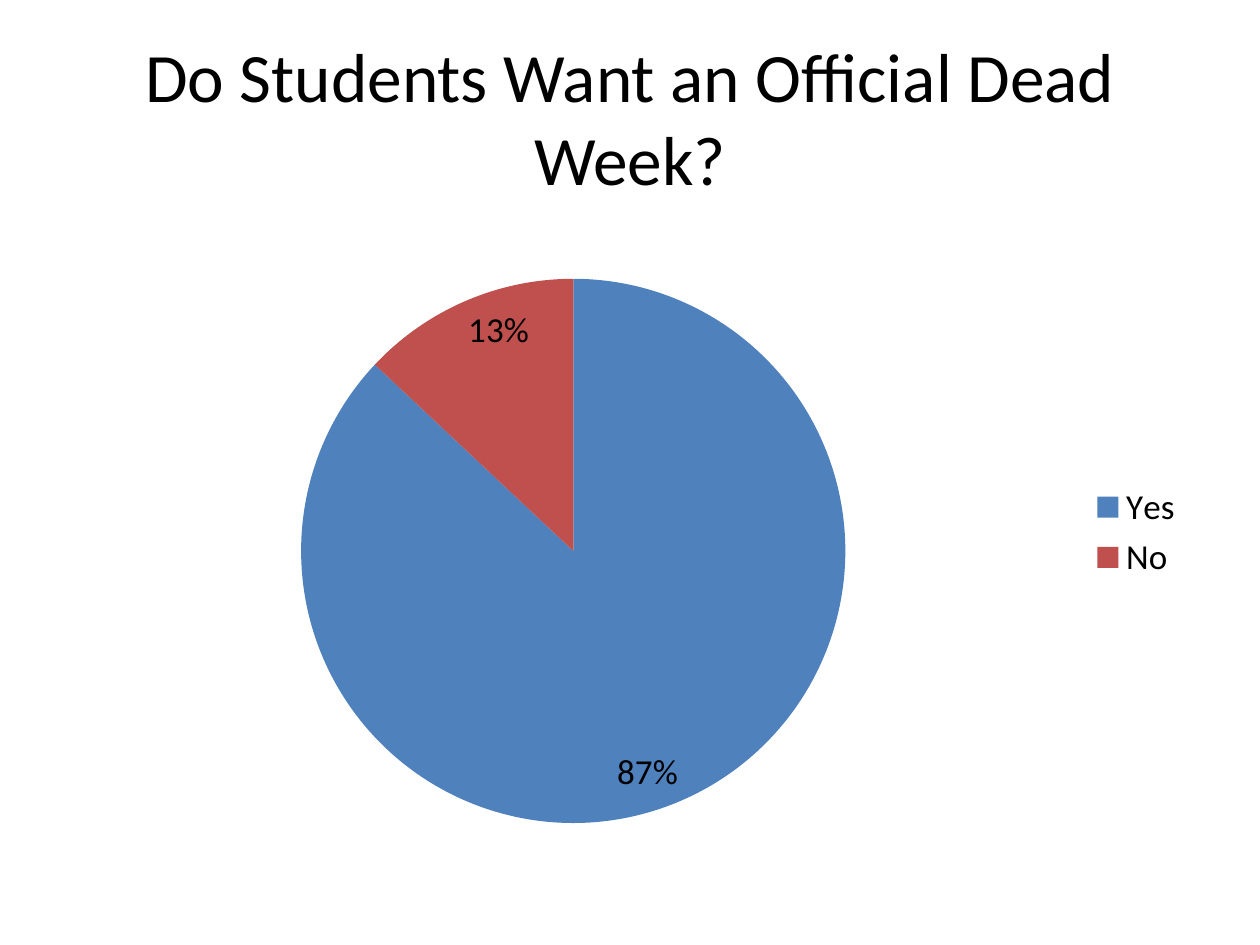
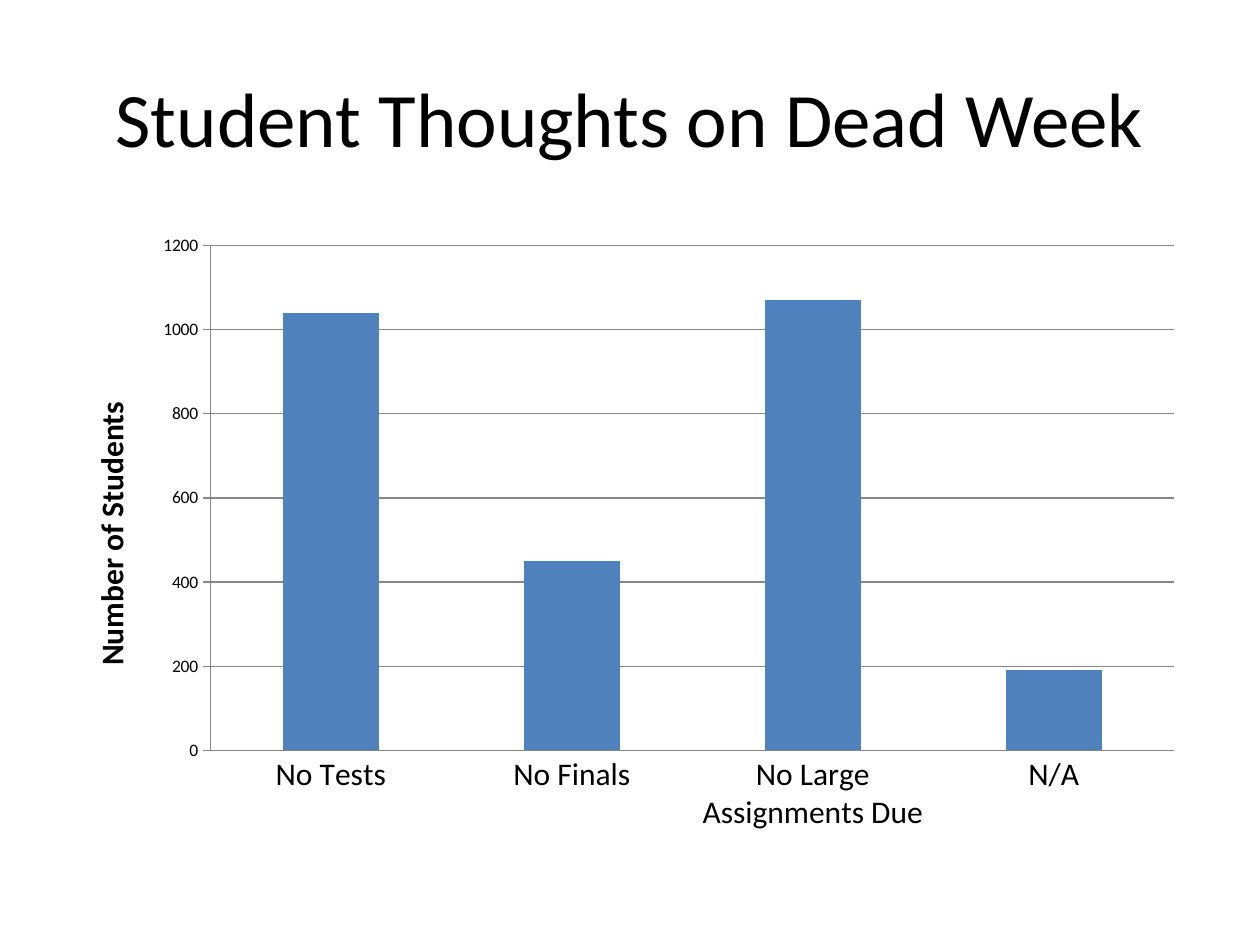
from dataclasses import dataclass

from lxml import etree
from pptx import Presentation
from pptx.chart.data import CategoryChartData
from pptx.dml.color import RGBColor
from pptx.enum.chart import XL_CHART_TYPE, XL_LABEL_POSITION, XL_LEGEND_POSITION, XL_TICK_MARK
from pptx.enum.text import MSO_ANCHOR, PP_ALIGN
from pptx.oxml.ns import qn
from pptx.util import Inches, Pt

PIE = XL_CHART_TYPE.PIE
COLUMN = XL_CHART_TYPE.COLUMN_CLUSTERED
INSIDE_END = XL_LABEL_POSITION.INSIDE_END
LEGEND_RIGHT = XL_LEGEND_POSITION.RIGHT
TICK_NONE = XL_TICK_MARK.NONE
TICK_CROSS = XL_TICK_MARK.CROSS
MIDDLE = MSO_ANCHOR.MIDDLE
CENTER = PP_ALIGN.CENTER


@dataclass(frozen=True)
class Theme:
    """Colours, font, type sizes and shared areas, as shares of the slide."""
    font: str = "Calibri"
    paper: RGBColor = RGBColor(0xFF, 0xFF, 0xFF)
    ink: RGBColor = RGBColor(0, 0, 0)
    blue: RGBColor = RGBColor(0x4F, 0x81, 0xBD)
    red: RGBColor = RGBColor(0xC0, 0x50, 0x4D)
    rule: RGBColor = RGBColor(0x87, 0x87, 0x87)
    title_size: float = 44
    long_title_size: float = 39.6
    chart_size: float = 10
    axis_size: float = 18
    label_size: float = 20
    title_area: tuple = (0.05, 0.04, 0.9, 1 / 6)
    chart_area: tuple = (0.05, 7 / 30, 0.9, 0.66)


class SurveyDeck:
    """Builds survey slides in one theme."""

    def __init__(self, theme):
        """Start an empty deck."""
        self.theme = theme
        self.deck = Presentation()
        self.deck.slide_width, self.deck.slide_height = Inches(10), Inches(7.5)
        self.page = None

    def place(self, area):
        """Turn shares of the slide into lengths."""
        sides = (self.deck.slide_width, self.deck.slide_height) * 2
        return [round(share * side) for share, side in zip(area, sides)]

    def style(self, font, size):
        """Give a font the theme's face and ink."""
        font.name, font.size = self.theme.font, Pt(size)
        font.color.rgb = self.theme.ink

    def add_page(self, title, size):
        """Add a blank page with a centred title."""
        self.page = self.deck.slides.add_slide(self.deck.slide_layouts[6])
        fill = self.page.background.fill
        fill.solid()
        fill.fore_color.rgb = self.theme.paper
        frame = self.page.shapes.add_textbox(*self.place(self.theme.title_area)).text_frame
        frame.word_wrap = True
        frame.vertical_anchor = MIDDLE
        para = frame.paragraphs[0]
        para.text, para.alignment = title, CENTER
        self.style(para.font, size)

    def add_chart(self, kind, answers, plot_area):
        """Add a one-series chart whose plot fills a share of its frame."""
        data = CategoryChartData()
        data.categories = list(answers)
        data.add_series("Series 1", answers.values())
        chart = self.page.shapes.add_chart(kind, *self.place(self.theme.chart_area), data).chart
        chart.has_title = chart.has_legend = False
        self.style(chart.font, self.theme.chart_size)
        self.fix_plot(chart, plot_area)
        return chart

    def fix_plot(self, chart, plot_area):
        """Set the inner plot's place as shares of the chart."""
        plot = chart.element.find(".//" + qn("c:plotArea"))
        for layout in plot.findall(qn("c:layout")):
            plot.remove(layout)
        layout = etree.Element(qn("c:layout"))
        plot.insert(0, layout)
        manual = etree.SubElement(layout, qn("c:manualLayout"))
        settings = [("layoutTarget", "inner"), ("xMode", "edge"), ("yMode", "edge")]
        for name, value in settings + list(zip("xywh", plot_area)):
            etree.SubElement(manual, qn("c:" + name)).set("val", str(value))

    def add_pie(self, answers, colors, plot_area):
        """Add a pie with percent labels and a legend."""
        chart = self.add_chart(PIE, answers, plot_area)
        chart.has_legend = True
        chart.legend.position = LEGEND_RIGHT
        chart.legend.include_in_layout = False
        self.style(chart.legend.font, self.theme.label_size)
        plot = chart.plots[0]
        plot.vary_by_categories = True
        for index, color in enumerate(colors):
            fill = plot.series[0].points[index].format.fill
            fill.solid()
            fill.fore_color.rgb = color
        plot.has_data_labels = True
        labels = plot.data_labels
        labels.show_percentage, labels.show_value = True, False
        labels.number_format, labels.number_format_is_linked = "0%", False
        labels.position = INSIDE_END
        self.style(labels.font, self.theme.label_size)

    def add_columns(self, answers, axis_title, top, step, plot_area):
        """Add a column chart with a titled value axis."""
        chart = self.add_chart(COLUMN, answers, plot_area)
        plot = chart.plots[0]
        plot.vary_by_categories, plot.gap_width = False, 150
        fill = plot.series[0].format.fill
        fill.solid()
        fill.fore_color.rgb = self.theme.blue
        names, counts = chart.category_axis, chart.value_axis
        names.major_tick_mark = TICK_NONE
        self.style(names.tick_labels.font, self.theme.axis_size)
        counts.minimum_scale, counts.maximum_scale, counts.major_unit = 0, top, step
        counts.major_tick_mark = TICK_CROSS
        counts.has_major_gridlines = True
        for ruled in (names, counts, counts.major_gridlines):
            ruled.format.line.color.rgb = self.theme.rule
            ruled.format.line.width = Pt(0.75)
        frame = counts.axis_title.text_frame
        para = frame.paragraphs[0]
        para.text = axis_title
        self.style(para.font, self.theme.axis_size)
        para.font.bold = True
        body = counts.axis_title.element.find(".//" + qn("a:bodyPr"))
        body.set("rot", "-5400000")
        body.set("vert", "horz")


def main():
    """Build and save both survey slides."""
    theme = Theme()
    survey = SurveyDeck(theme)
    survey.add_page("Do Students Want an Official Dead Week?", theme.long_title_size)
    survey.add_pie({"Yes": 87, "No": 13}, (theme.blue, theme.red), (0.21, 0.09, 0.48, 0.88))
    survey.add_page("Student Thoughts on Dead Week", theme.title_size)
    thoughts = {"No Tests": 1040, "No Finals": 450, "No Large Assignments Due": 1070, "N/A": 190}
    survey.add_columns(thoughts, "Number of Students", 1200, 200, (0.13, 0.04, 0.85, 0.81))
    survey.deck.save("out.pptx")


if __name__ == "__main__":
    main()
